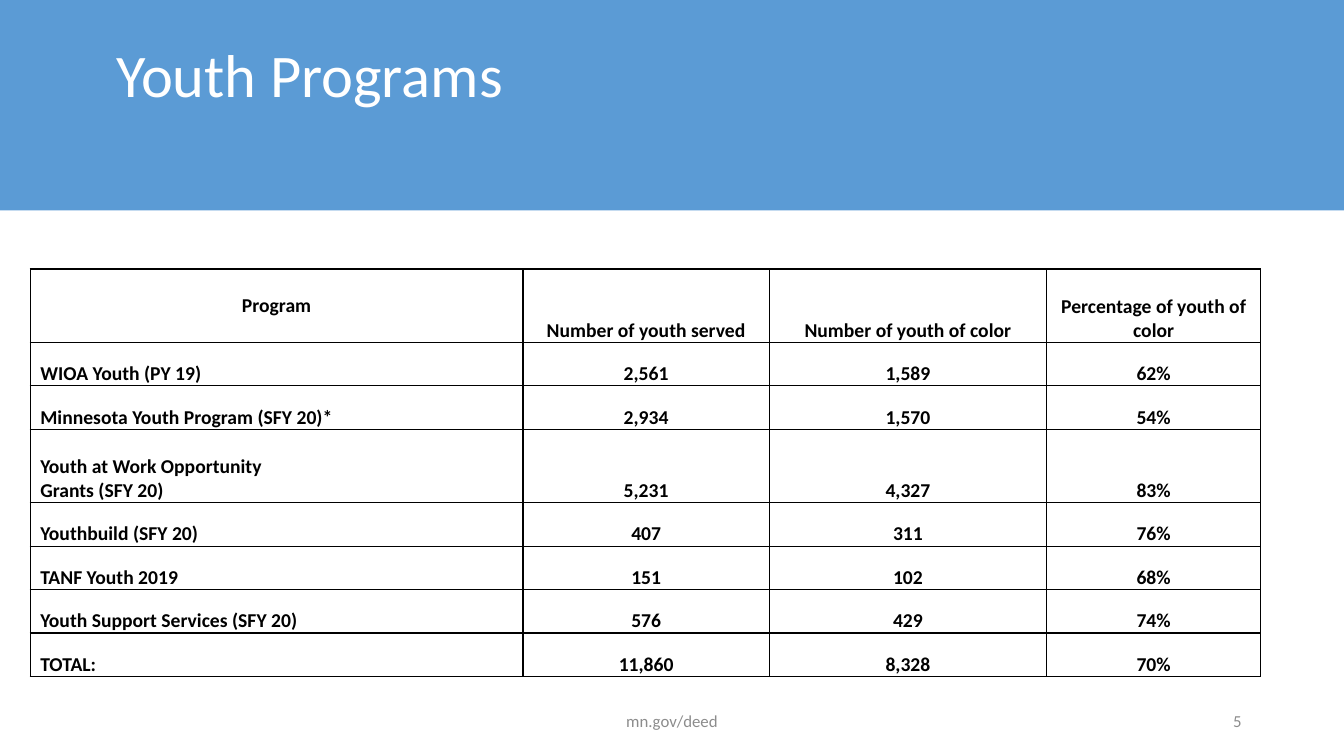
from dataclasses import dataclass

from lxml.etree import SubElement as Sub
from pptx import Presentation
from pptx.dml.color import RGBColor as RGB
from pptx.enum.shapes import MSO_SHAPE as Shape
from pptx.enum.text import MSO_ANCHOR as Anchor, MSO_AUTO_SIZE as Fit, PP_ALIGN as Align
from pptx.oxml.ns import qn
from pptx.util import Pt


@dataclass(frozen=True)
class Theme:
    font: str = "Calibri"
    band: RGB = RGB(0x5B, 0x9B, 0xD5)
    white: RGB = RGB(255, 255, 255)
    black: RGB = RGB(0, 0, 0)
    gray: RGB = RGB(0x8C, 0x8C, 0x8C)
    head: float = 43.2
    body: float = 14
    foot: float = 12


THEME = Theme()
WIDE, HIGH = 960, 540

ROWS = [
    ("Program", "Number of youth served", "Number of youth of color", "Percentage of youth of color"),
    ("WIOA Youth (PY 19)", "2,561", "1,589", "62%"),
    ("Minnesota Youth Program (SFY 20)*", "2,934", "1,570", "54%"),
    ("Youth at Work Opportunity\nGrants (SFY 20)", "5,231", "4,327", "83%"),
    ("Youthbuild (SFY 20)", "407", "311", "76%"),
    ("TANF Youth 2019", "151", "102", "68%"),
    ("Youth Support Services (SFY 20)", "576", "429", "74%"),
    ("TOTAL:", "11,860", "8,328", "70%"),
]
COLS = (352, 176, 198, 153)
TALL, LOW = 52.4, 31.05


def place(shape, box):
    shape.left, shape.top, shape.width, shape.height = map(Pt, box)


def style(frame, size, color, align, bold=False):
    for para in frame.paragraphs:
        para.alignment = align
        for run in para.runs:
            font = run.font
            font.name, font.size, font.bold = THEME.font, Pt(size), bold
            font.color.rgb = color


def border(cell):
    props = cell._tc.get_or_add_tcPr()
    for i, side in enumerate(("lnL", "lnR", "lnT", "lnB")):
        line = Sub(props, qn(f"a:{side}"), w=str(Pt(1)))
        fill = Sub(line, qn("a:solidFill"))
        Sub(fill, qn("a:srgbClr"), val=str(THEME.black))
        # Lines come ahead of the fill in the cell properties
        props.insert(i, line)


def header(slide, box, text):
    left, top, wide, high = box
    band = slide.shapes.add_shape(Shape.RECTANGLE, *map(Pt, box))
    band.shadow.inherit = False
    band.fill.solid()
    band.fill.fore_color.rgb = THEME.band
    band.line.fill.background()

    title = slide.shapes.title
    title.element.addprevious(band.element)
    place(title, (left + 66, top + 28.8, wide - 132, high - 46))
    frame = title.text_frame
    frame.text = text
    frame.auto_size = Fit.NONE
    frame.word_wrap = True
    frame.vertical_anchor = Anchor.TOP
    frame.margin_left = Pt(17)
    frame.paragraphs[0].line_spacing = 0.9
    style(frame, THEME.head, THEME.white, Align.LEFT)


def grid(slide, box):
    table = slide.shapes.add_table(len(ROWS), len(COLS), *map(Pt, box)).table
    table.first_row = table.horz_banding = False
    for col, wide in zip(table.columns, COLS):
        col.width = Pt(wide)
    for r, row in enumerate(ROWS):
        table.rows[r].height = Pt(TALL if r == 0 or "\n" in row[0] else LOW)
        for c, text in enumerate(row):
            cell = table.cell(r, c)
            cell.text = text
            cell.margin_left = cell.margin_right = Pt(7.2)
            cell.margin_top = cell.margin_bottom = 0
            cell.vertical_anchor = Anchor.MIDDLE if r == c == 0 else Anchor.BOTTOM
            cell.fill.solid()
            cell.fill.fore_color.rgb = THEME.white
            border(cell)
            align = Align.LEFT if r and c == 0 else Align.CENTER
            style(cell.text_frame, THEME.body, THEME.black, align, True)


def footer(slide, box):
    left, top, wide, high = box
    notes = (
        ("mn.gov/deed", (wide - 324) / 2, 324, Align.CENTER),
        ("5", wide - 282, 216, Align.RIGHT),
    )
    for text, shift, span, align in notes:
        note = slide.shapes.add_textbox(*map(Pt, (left + shift, top, span, high)))
        frame = note.text_frame
        frame.text = text
        frame.word_wrap = True
        frame.vertical_anchor = Anchor.MIDDLE
        style(frame, THEME.foot, THEME.gray, align)


def main():
    deck = Presentation()
    deck.slide_width, deck.slide_height = Pt(WIDE), Pt(HIGH)
    slide = deck.slides.add_slide(deck.slide_layouts[5])
    # Title band
    header(slide, (0, 0, WIDE, 150.4), "Youth Programs")
    # Program table
    grid(slide, (21.6, 192.2, sum(COLS), 291))
    # Address and page number
    footer(slide, (0, 500.5, WIDE, 28.8))
    deck.save("out.pptx")


if __name__ == "__main__":
    main()
